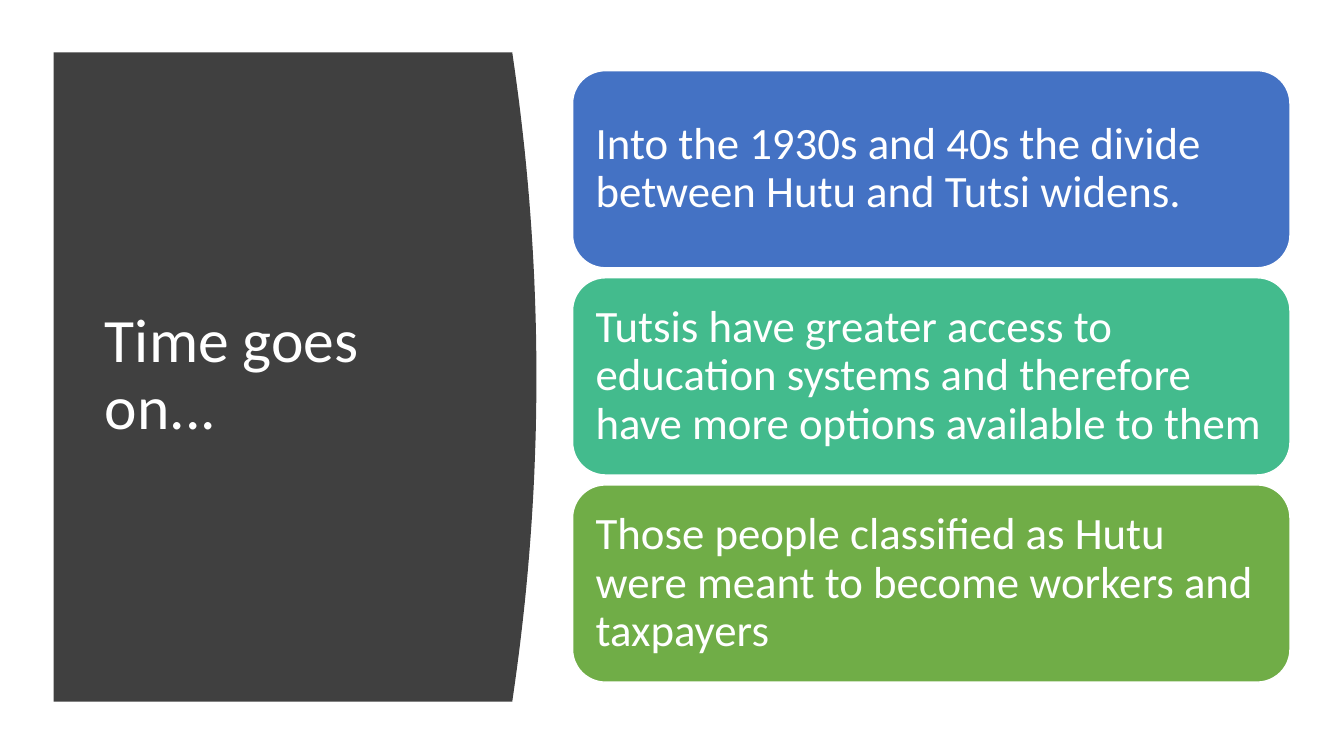
from pptx import Presentation
from pptx.dml.color import RGBColor
from pptx.enum import shapes, text
from pptx.util import Cm, Pt

WHITE = RGBColor(0xFF, 0xFF, 0xFF)
CHARCOAL = RGBColor(0x40, 0x40, 0x40)
BLUE = RGBColor(0x44, 0x72, 0xC4)
TEAL = RGBColor(0x43, 0xBB, 0x8D)
GREEN = RGBColor(0x70, 0xAD, 0x47)

CARDS = [
    ("Into the 1930s and 40s the divide between Hutu and Tutsi widens.", BLUE),
    ("Tutsis have greater access to education systems and therefore "
     "have more options available to them", TEAL),
    ("Those people classified as Hutu were meant to become workers "
     "and taxpayers", GREEN),
]


def fill_shape(sp, color):
    sp.shadow.inherit = False
    sp.fill.solid()
    sp.fill.fore_color.rgb = color


def write_text(sp, content, size):
    tf = sp.text_frame
    tf.text = content
    tf.word_wrap = True
    tf.auto_size = text.MSO_AUTO_SIZE.NONE
    tf.vertical_anchor = text.MSO_ANCHOR.MIDDLE
    p = tf.paragraphs[0]
    p.alignment = text.PP_ALIGN.LEFT
    p.line_spacing = 0.9
    p.font.name = "Calibri"
    p.font.size = Pt(size)
    p.font.color.rgb = WHITE
    return tf


def add_title_panel(slide, left, top, width, height):
    bulge, steps = Cm(0.61), 40
    edge = []
    for i in range(steps + 1):
        offset = 2 * i / steps - 1
        edge.append((round(left + width - bulge * offset ** 2),
                     round(top + height * i / steps)))
    builder = slide.shapes.build_freeform(left, top)
    builder.add_line_segments(edge + [(left, top + height)], close=True)
    panel = builder.convert_to_shape()
    fill_shape(panel, CHARCOAL)
    panel.line.fill.background()

    title = slide.shapes.title
    title.left, title.top = left + Cm(1.04), top + Cm(1.5)
    title.width, title.height = Cm(9.5), height - Cm(3.05)
    write_text(title, "Time goes on...", 44)
    title.element.addprevious(panel.element)


def add_cards(slide, left, top, width, height):
    gap = Cm(0.25)
    card_height = (height - gap * (len(CARDS) - 1)) // len(CARDS)
    for i, (content, color) in enumerate(CARDS):
        sp = slide.shapes.add_shape(
            shapes.MSO_SHAPE.ROUNDED_RECTANGLE,
            left, top + i * (card_height + gap), width, card_height)
        fill_shape(sp, color)
        sp.line.color.rgb = WHITE
        sp.line.width = Pt(1)
        tf = write_text(sp, content, 32)
        tf.margin_left = tf.margin_right = Cm(0.34)
        tf.margin_top = tf.margin_bottom = Cm(0.34)


def main():
    prs = Presentation()
    prs.slide_width, prs.slide_height = Cm(33.87), Cm(19.05)
    slide = prs.slides.add_slide(prs.slide_layouts[5])
    add_title_panel(slide, Cm(1.35), Cm(1.32), Cm(12.17), Cm(16.36))
    add_cards(slide, Cm(14.43), Cm(1.78), Cm(18.08), Cm(15.41))
    prs.save("out.pptx")


if __name__ == "__main__":
    main()
